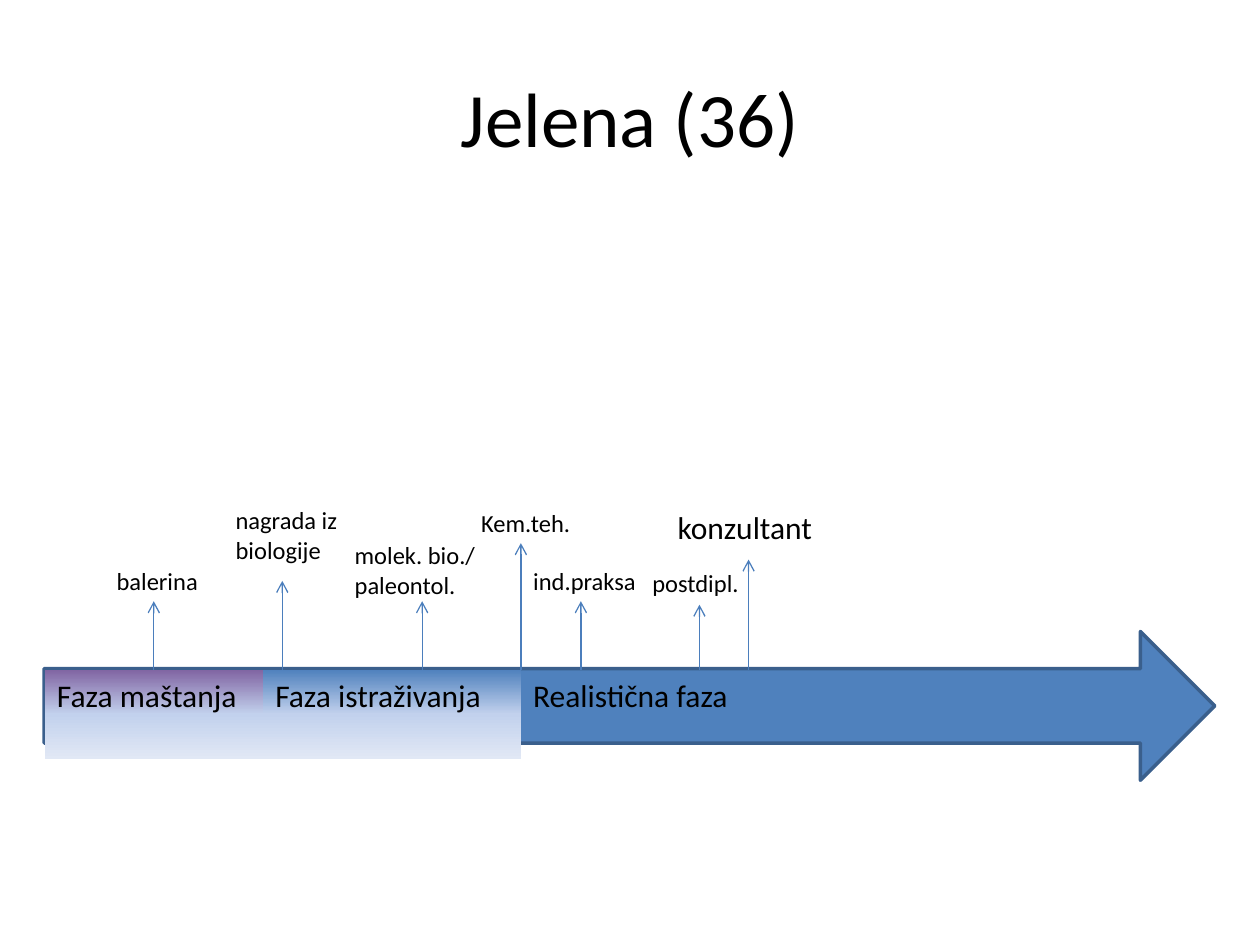
"""Build a career timeline slide with three phases and their turning points."""
from copy import deepcopy
from itertools import accumulate

from lxml.etree import SubElement
from pptx import Presentation
from pptx.dml.color import RGBColor
from pptx.enum.shapes import MSO_CONNECTOR as Connector, MSO_SHAPE as Preset
from pptx.enum.text import MSO_ANCHOR as Anchor, PP_ALIGN as Align
from pptx.oxml.ns import qn
from pptx.util import Cm, Pt

TITLE = "Jelena (36)"
PHASES = [
    ("Faza maštanja", 4.4, ("8064A2", "C2D1ED", "E1E8F5")),
    ("Faza istraživanja", 5.2, ("4F81BD", "C2D1ED", "E1E8F5")),
    ("Realistična faza", 10.4, None),
]
EVENTS = [
    {"text": "balerina", "box": (2.1, 11.28, 2.8, 0.86), "tip": (3.1, 12.12), "phase": 0},
    {"text": "nagrada iz biologije", "box": (4.5, 10.06, 2.6, 1.45), "tip": (5.69, 11.71)},
    {"text": "molek. bio./ paleontol.", "box": (6.9, 10.77, 3, 1.45), "tip": (8.51, 12.12)},
    {"text": "Kem.teh.", "box": (9.45, 10.11, 2.4, 0.86), "tip": (10.5, 10.95)},
    {"text": "ind.praksa", "box": (10.5, 11.28, 2.8, 0.86), "tip": (11.71, 12.12)},
    {"text": "postdipl.", "box": (12.9, 11.33, 2.4, 0.86), "tip": (14.1, 12.19), "joined": True},
    {"text": "konzultant", "box": (13.41, 10.11, 3.4, 1.02), "tip": (15.09, 11.28), "size": "phase"},
]
TIMELINE_BOX = (0.89, 12.73, 23.6, 3)
PHASE_LEFT, PHASE_TOP, PHASE_HEIGHT = 0.9, 13.5, 1.8
THEME = {
    "font": "Calibri",
    "text": RGBColor.from_string("000000"),
    "arrow": RGBColor.from_string("4F81BD"),
    "outline": RGBColor.from_string("3A5F8C"),
    "pointer": RGBColor.from_string("4B7EBC"),
    "title": Pt(44), "phase": Pt(18), "event": Pt(14),
}


def lengths(values):
    return [Cm(value) for value in values]


def apply_format(target, values):
    for name, value in values.items():
        setattr(target, name, value)


def write(shape, text, size, align=Align.LEFT, anchor=Anchor.TOP):
    frame = shape.text_frame
    apply_format(frame, {"text": text, "word_wrap": True, "vertical_anchor": anchor})
    paragraph = frame.paragraphs[0]
    paragraph.alignment = align
    font = paragraph.runs[0].font
    apply_format(font, {"name": THEME["font"], "size": THEME[size]})
    font.color.rgb = THEME["text"]


def fill_gradient(shape, colors):
    shape.fill.gradient()
    shape.fill.gradient_angle = 270
    stop_list = shape.fill._fill._gradFill.find(qn("a:gsLst"))
    stop_list.insert(1, deepcopy(stop_list[0]))
    for index, (stop, color) in enumerate(zip(shape.fill.gradient_stops, colors)):
        stop.position = index / (len(colors) - 1)
        stop.color.rgb = RGBColor.from_string(color)


def add_timeline(slide):
    arrow = slide.shapes.add_shape(Preset.RIGHT_ARROW, *lengths(TIMELINE_BOX))
    arrow.shadow.inherit = False
    arrow.fill.solid()
    arrow.fill.fore_color.rgb = THEME["arrow"]
    arrow.line.color.rgb = THEME["outline"]
    arrow.line.width = Pt(2)


def add_phases(slide):
    lefts = accumulate((width for _, width, _ in PHASES), initial=PHASE_LEFT)
    phases = []
    for left, (text, width, colors) in zip(lefts, PHASES):
        box = lengths((left, PHASE_TOP, width, PHASE_HEIGHT))
        if colors:
            shape = slide.shapes.add_shape(Preset.RECTANGLE, *box)
            shape.shadow.inherit = False
            shape.line.fill.background()
            fill_gradient(shape, colors)
        else:
            shape = slide.shapes.add_textbox(*box)
        write(shape, text, "phase")
        phases.append(shape)
    return phases


def add_event(slide, event, phases):
    label = slide.shapes.add_textbox(*lengths(event["box"]))
    write(label, event["text"], event.get("size", "event"))
    x, y = event["tip"]
    pointer = slide.shapes.add_connector(Connector.STRAIGHT, *lengths((x, PHASE_TOP, x, y)))
    if "phase" in event:
        pointer.begin_connect(phases[event["phase"]], 0)
    if event.get("joined"):
        pointer.end_connect(label, 2)
    pointer.line.color.rgb = THEME["pointer"]
    pointer.line.width = Pt(0.75)
    SubElement(pointer.line._get_or_add_ln(), qn("a:tailEnd"), type="arrow")
    SubElement(pointer._element.spPr, qn("a:effectLst"))


def main():
    presentation = Presentation()
    apply_format(presentation, {"slide_width": Cm(25.4), "slide_height": Cm(19.05)})
    slide = presentation.slides.add_slide(presentation.slide_layouts[5])
    title = slide.shapes.title
    apply_format(title, dict(zip(("left", "top", "width", "height"),
                                 lengths((1.27, 0.76, 22.86, 3.18)))))
    write(title, TITLE, "title", Align.CENTER, Anchor.MIDDLE)
    add_timeline(slide)
    phases = add_phases(slide)
    for event in EVENTS:
        add_event(slide, event, phases)
    presentation.save("out.pptx")


if __name__ == "__main__":
    main()
